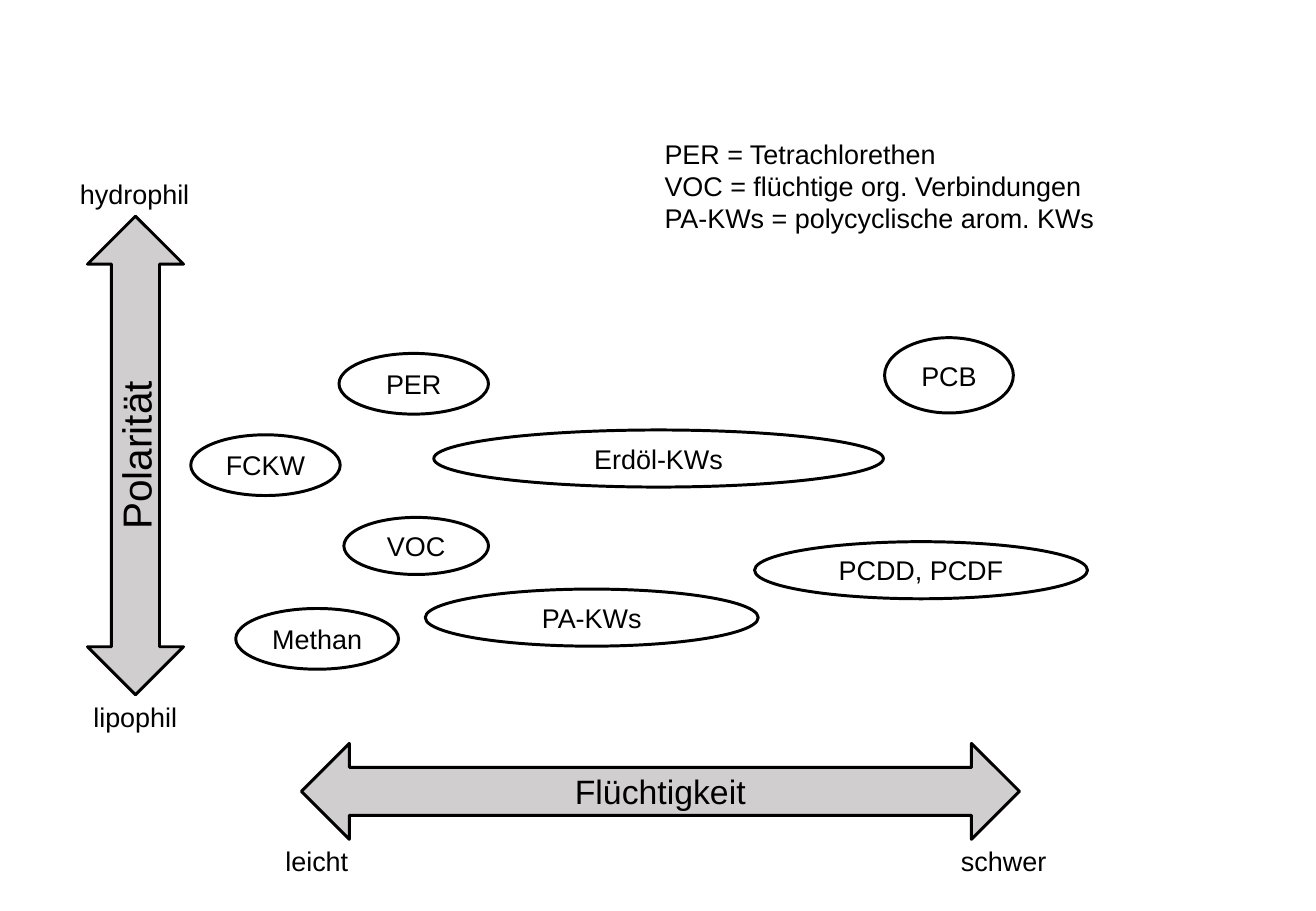
"""Chart of organic pollutants by polarity and volatility."""
from pptx import Presentation
from pptx.dml.color import RGBColor
from pptx.enum.shapes import MSO_SHAPE
from pptx.enum.text import MSO_ANCHOR, MSO_AUTO_SIZE, PP_ALIGN
from pptx.util import Pt

SCALE = 9144
COLORS = {"ink": "000000", "arrow": "D0CECE"}
FONT = "Arial"


class Board:
    def __init__(self, deck):
        self.slide = deck.slides.add_slide(deck.slide_layouts[6])

    def color(self, name):
        return RGBColor.from_string(COLORS[name])

    def letter(self, frame, text, size, align):
        frame.text = text
        for line in frame.paragraphs:
            line.alignment = align
            for run in line.runs:
                run.font.name = FONT
                run.font.size = Pt(size)
                run.font.color.rgb = self.color("ink")

    def shape(self, kind, box, text, size):
        item = self.slide.shapes.add_shape(kind, *(n * SCALE for n in box))
        item.shadow.inherit = False
        item.fill.background()
        item.line.color.rgb = self.color("ink")
        item.line.width = Pt(1.75)
        item.text_frame.vertical_anchor = MSO_ANCHOR.MIDDLE
        self.letter(item.text_frame, text, size, PP_ALIGN.CENTER)
        return item

    def oval(self, box, text):
        self.shape(MSO_SHAPE.OVAL, box, text, 16)

    def arrow(self, kind, box, text, size, turn=False):
        item = self.shape(kind, box, text, size)
        item.fill.solid()
        item.fill.fore_color.rgb = self.color("arrow")
        if turn:
            item.text_frame._txBody.bodyPr.set("vert", "vert270")

    def label(self, box, text):
        item = self.slide.shapes.add_textbox(*(n * SCALE for n in box))
        item.text_frame.word_wrap = False
        item.text_frame.auto_size = MSO_AUTO_SIZE.SHAPE_TO_FIT_TEXT
        self.letter(item.text_frame, text, 16, PP_ALIGN.LEFT)


OVALS = [
    ((157, 358, 123, 50), "FCKW"),
    ((194, 501, 134, 50), "Methan"),
    ((279, 291, 123, 50), "PER"),
    ((283, 426, 119, 47), "VOC"),
    ((357, 354, 370, 47), "Erdöl-KWs"),
    ((350, 485, 274, 47), "PA-KWs"),
    ((728, 278, 106, 62), "PCB"),
    ((621, 446, 274, 47), "PCDD, PCDF"),
]
LEGEND = [
    "PER = Tetrachlorethen",
    "VOC = flüchtige org. Verbindungen",
    "PA-KWs = polycyclische arom. KWs",
]
LABELS = [
    ((56, 141, 111, 37), "hydrophil"),
    ((67, 572, 90, 37), "lipophil"),
    ((537, 108, 378, 91), "\n".join(LEGEND)),
    ((225, 690, 72, 37), "leicht"),
    ((781, 690, 91, 37), "schwer"),
]


def main():
    deck = Presentation()
    deck.slide_width = 1083 * SCALE
    deck.slide_height = 750 * SCALE
    board = Board(deck)
    board.arrow(MSO_SHAPE.UP_DOWN_ARROW, (72, 178, 79, 394), "Polarität", 24, turn=True)
    for box, text in OVALS:
        board.oval(box, text)
    board.arrow(MSO_SHAPE.LEFT_RIGHT_ARROW, (248, 612, 591, 79), "Flüchtigkeit", 20)
    for box, text in LABELS:
        board.label(box, text)
    deck.save("out.pptx")


if __name__ == "__main__":
    main()
